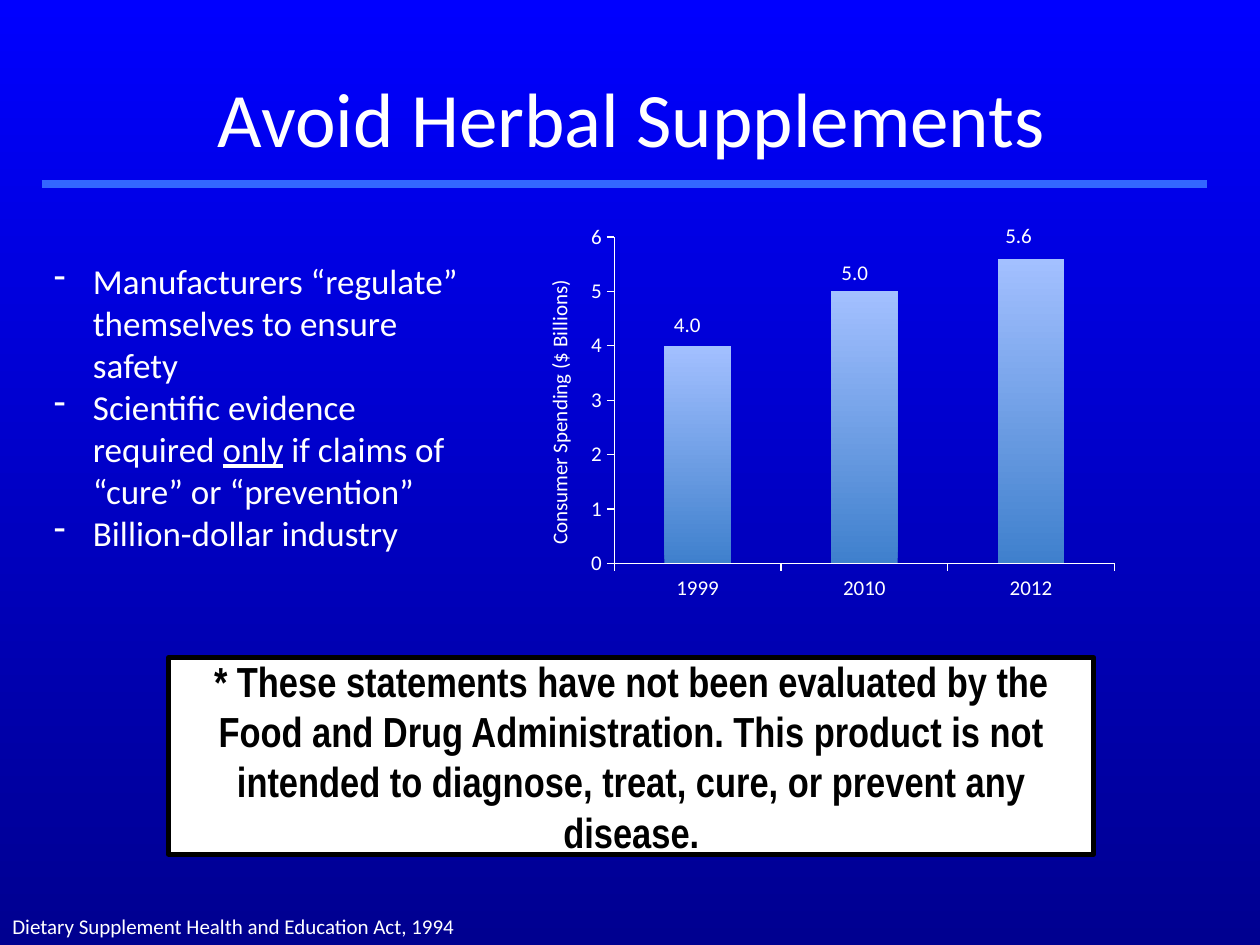
from pptx import Presentation
from pptx.chart.data import CategoryChartData
from pptx.dml.color import RGBColor
from pptx.enum.chart import XL_CHART_TYPE, XL_TICK_MARK
from pptx.enum.shapes import MSO_CONNECTOR, MSO_SHAPE
from pptx.enum.text import MSO_ANCHOR, PP_ALIGN
from pptx.oxml.ns import qn
from pptx.util import Inches, Pt
from lxml.etree import SubElement

WHITE = RGBColor(0xFF, 0xFF, 0xFF)
BLACK = RGBColor(0, 0, 0)
NAVY = RGBColor(0, 0, 0x90)
BLUE = RGBColor(0, 0, 0xFF)
RULE_BLUE = RGBColor(0x33, 0x66, 0xFF)
BAR_BOTTOM = RGBColor(0x3F, 0x80, 0xCD)
BAR_TOP = RGBColor(0xA3, 0xC0, 0xFF)

BULLETS = [
    [("Manufacturers “regulate” themselves to ensure safety", False)],
    [("Scientific evidence required ", False), ("only", True),
     (" if claims of “cure” or “prevention”", False)],
    [("Billion-dollar industry", False)],
]
DISCLAIMER = ("* These statements have not been evaluated by the Food and Drug "
              "Administration. This product is not intended to diagnose, treat, "
              "cure, or prevent any disease.")
SPENDING = {"1999": 4.0, "2010": 5.0, "2012": 5.6}
LABEL_SPOTS = [(5.25, 2.42), (6.58, 2.01), (7.88, 1.72)]


def set_font(font, size, color=WHITE, **extra):
    values = {"name": "Calibri", "size": Pt(size), "bold": False, **extra}
    for key, value in values.items():
        setattr(font, key, value)
    font.color.rgb = color


def set_gradient(fill, bottom, top):
    fill.gradient()
    fill.gradient_angle = 90
    for stop, color in zip(fill.gradient_stops, (bottom, top)):
        stop.color.rgb = color


def add_run(p, text, size, color=WHITE, **extra):
    r = p.add_run()
    r.text = text
    set_font(r.font, size, color, **extra)


def add_text(s, box, text, size, wrap=False, align=PP_ALIGN.LEFT,
             anchor=MSO_ANCHOR.TOP):
    tf = s.shapes.add_textbox(*map(Inches, box)).text_frame
    tf.word_wrap = wrap
    tf.vertical_anchor = anchor
    p = tf.paragraphs[0]
    p.alignment = align
    add_run(p, text, size)


def add_bullets(s, box, items):
    tf = s.shapes.add_textbox(*map(Inches, box)).text_frame
    tf.word_wrap = True
    for i, runs in enumerate(items):
        p = tf.add_paragraph() if i else tf.paragraphs[0]
        pPr = p._p.get_or_add_pPr()
        pPr.set("marL", str(Inches(0.31)))
        pPr.set("indent", str(-Inches(0.31)))
        SubElement(pPr, qn("a:buChar")).set("char", "-")
        for text, underline in runs:
            add_run(p, text, 20, underline=underline)


def add_rule(s, x1, x2, y):
    line = s.shapes.add_connector(MSO_CONNECTOR.STRAIGHT, Inches(x1), Inches(y),
                                  Inches(x2), Inches(y))
    line.line.color.rgb = RULE_BLUE
    line.line.width = Pt(4.5)
    SubElement(line._element.spPr, qn("a:effectLst"))


def add_disclaimer(s, box, text):
    sp = s.shapes.add_shape(MSO_SHAPE.RECTANGLE, *map(Inches, box))
    sp.shadow.inherit = False
    sp.fill.solid()
    sp.fill.fore_color.rgb = WHITE
    sp.line.color.rgb = BLACK
    sp.line.width = Pt(3)
    tf = sp.text_frame
    tf.word_wrap = True
    tf.vertical_anchor = MSO_ANCHOR.MIDDLE
    p = tf.paragraphs[0]
    p.alignment = PP_ALIGN.CENTER
    add_run(p, text, 24, BLACK, name="Arial Narrow", bold=True)


def add_spending_chart(s, box):
    data = CategoryChartData()
    data.categories = list(SPENDING)
    data.add_series("Series 1", list(SPENDING.values()))
    chart = s.shapes.add_chart(XL_CHART_TYPE.COLUMN_CLUSTERED,
                               *map(Inches, box), data).chart
    chart.has_title = False
    chart.has_legend = False
    set_font(chart.font, 18)
    plot = chart.plots[0]
    plot.gap_width = 150
    plot.vary_by_categories = False
    set_gradient(plot.series[0].format.fill, BAR_BOTTOM, BAR_TOP)
    for axis in (chart.category_axis, chart.value_axis):
        axis.has_major_gridlines = False
        axis.major_tick_mark = XL_TICK_MARK.OUTSIDE
        axis.format.line.color.rgb = WHITE
        axis.format.line.width = Pt(0.75)
        set_font(axis.tick_labels.font, 12)
    value_axis = chart.value_axis
    value_axis.minimum_scale, value_axis.maximum_scale = 0, 6
    value_axis.major_unit = 1
    p = value_axis.axis_title.text_frame.paragraphs[0]
    add_run(p, "Consumer Spending ($ Billions)", 12)


def main():
    prs = Presentation()
    prs.slide_width, prs.slide_height = Inches(10), Inches(7.5)
    s = prs.slides.add_slide(prs.slide_layouts[6])
    set_gradient(s.background.fill, NAVY, BLUE)
    add_text(s, (0.21, 0.3, 9.61, 1.25), "Avoid Herbal Supplements", 44,
             True, PP_ALIGN.CENTER, MSO_ANCHOR.MIDDLE)
    add_rule(s, 0.33, 9.58, 1.46)
    add_disclaimer(s, (1.34, 5.22, 7.34, 1.56), DISCLAIMER)
    add_text(s, (0, 7.2, 3.76, 0.3),
             "Dietary Supplement Health and Education Act, 1994", 12)
    add_spending_chart(s, (4.12, 1.72, 4.82, 3.11))
    for (x, y), value in zip(LABEL_SPOTS, SPENDING.values()):
        add_text(s, (x, y, 0.42, 0.3), f"{value:.1f}", 12)
    add_bullets(s, (0.33, 2.01, 3.6, 2.46), BULLETS)
    prs.save("out.pptx")


if __name__ == "__main__":
    main()
